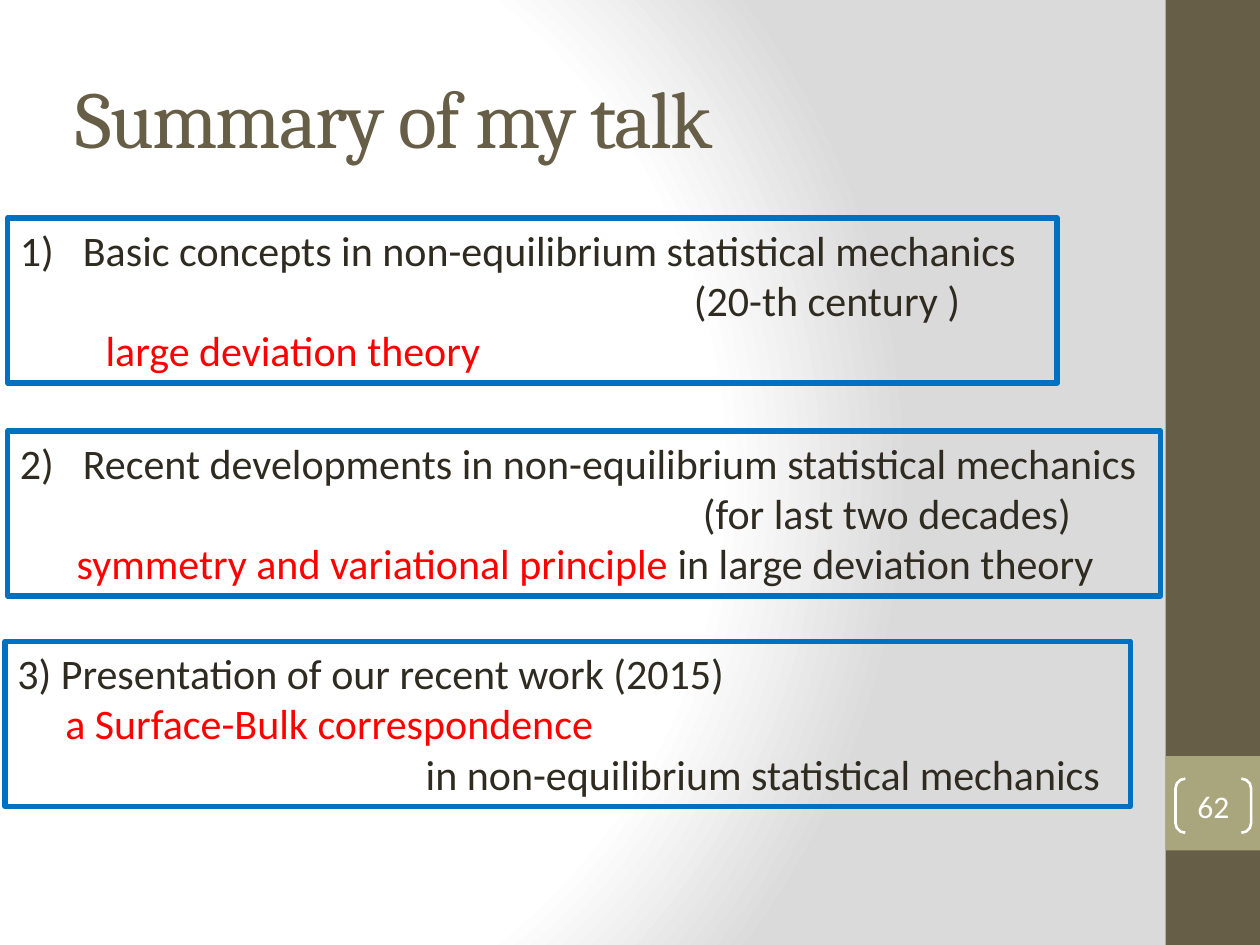
import pptx
import pptx.util
import pptx.dml.color
import pptx.enum.shapes
import pptx.enum.text
import pptx.oxml
import pptx.oxml.ns

# Content: each line is (indent in inches, [(text, colour), ...])
TITLE = "Summary of my talk"
PAGE = "62"
BOXES = [
    {"at": (0.06, 1.73, 8.33), "num": 1, "lines": [
        (0.5, [("Basic concepts in non-equilibrium statistical mechanics", "ink")]),
        (5.35, [("(20-th century )", "ink")]),
        (0.68, [("large deviation theory", "red")])]},
    {"at": (0.06, 3.42, 9.15), "num": 2, "lines": [
        (0.5, [("Recent developments in non-equilibrium statistical mechanics", "ink")]),
        (5.42, [("(for last two decades)", "ink")]),
        (0.45, [("symmetry and variational principle ", "red"),
                ("in large deviation theory", "ink")])]},
    {"at": (0.04, 5.09, 8.93), "num": None, "lines": [
        (0, [("3) Presentation of our recent work (2015)", "ink")]),
        (0.38, [("a Surface-Bulk correspondence", "red")]),
        (3.24, [("in non-equilibrium statistical mechanics", "ink")])]},
]
COLORS = {"ink": "2F2B20", "red": "FF0000", "brown": "675E47", "olive": "A9A57C",
          "blue": "0070C0", "white": "FFFFFF", "gray": "DADADA"}
STOPS = [(0, "white"), (75, "white"), (100, "gray")]

# Page
WIDE, HIGH = 10, 7.5
BAR = 0.075 * WIDE
BOX_H = 1.31
SHAPE = pptx.enum.shapes.MSO_SHAPE
ALIGN = pptx.enum.text.PP_ALIGN
inch = pptx.util.Inches
deck = pptx.Presentation()
deck.slide_width, deck.slide_height = inch(WIDE), inch(HIGH)
slide = deck.slides.add_slide(deck.slide_layouts[6])


def rgb(name):
    return pptx.dml.color.RGBColor.from_string(COLORS[name])


def draw(kind, at, fill=None, line=None, width=1):
    shape = slide.shapes.add_shape(kind, *map(inch, at))
    shape.shadow.inherit = False
    if fill:
        shape.fill.solid()
        shape.fill.fore_color.rgb = rgb(fill)
    else:
        shape.fill.background()
    if line:
        shape.line.color.rgb = rgb(line)
        shape.line.width = pptx.util.Pt(width)
    else:
        shape.line.fill.background()
    return shape


def write(shape, lines, size=24, font="Calibri", align=ALIGN.LEFT, inset=(0.1, 0.05),
          middle=True, num=None, track=0):
    frame = shape.text_frame
    frame.word_wrap = True
    anchor = pptx.enum.text.MSO_ANCHOR
    frame.vertical_anchor = anchor.MIDDLE if middle else anchor.TOP
    frame.margin_left = frame.margin_right = inch(inset[0])
    frame.margin_top = frame.margin_bottom = inch(inset[1])
    for i, (left, runs) in enumerate(lines):
        para = frame.paragraphs[0] if i == 0 else frame.add_paragraph()
        para.alignment = align
        props = para._p.get_or_add_pPr()
        props.set("marL", str(inch(left)))
        props.set("indent", "0")
        if num and i == 0:
            props.set("indent", str(-inch(left)))
            mark = pptx.oxml.parse_xml(
                f'<a:buAutoNum {pptx.oxml.ns.nsdecls("a")} type="arabicParenR" startAt="{num}"/>')
            props.append(mark)
        for text, color in runs:
            run = para.add_run()
            run.text = text
            run.font.size = pptx.util.Pt(size)
            run.font.name = font
            run.font.color.rgb = rgb(color)
            if track:
                run._r.get_or_add_rPr().set("spc", str(track * 100))


# Background: round gradient, white to gray
slide.background.fill.gradient()
old = slide.element.find(".//" + pptx.oxml.ns.qn("a:gradFill"))
stops = "".join(f'<a:gs pos="{pos * 1000}"><a:srgbClr val="{COLORS[name]}"/></a:gs>'
                for pos, name in STOPS)
grad = pptx.oxml.parse_xml(
    f'<a:gradFill {pptx.oxml.ns.nsdecls("a")} rotWithShape="1"><a:gsLst>{stops}</a:gsLst>'
    '<a:path path="circle"><a:fillToRect l="20000" t="50000" r="100000" b="50000"/></a:path>'
    '</a:gradFill>')
old.getparent().replace(old, grad)

# Side bar
draw(SHAPE.RECTANGLE, (WIDE - BAR, 0, BAR, HIGH), fill="brown")
draw(SHAPE.RECTANGLE, (WIDE - BAR, 0.8 * HIGH, BAR, BAR), fill="olive")

# Title
head = slide.shapes.add_textbox(*map(inch, (0.5, 0.3, 8.33, 1.25)))
write(head, [(0, [(TITLE, "brown")])], size=46, font="Cambria", track=-1)

# Page number
badge = draw(SHAPE.DOUBLE_BRACKET, (9.33, 6.18, 0.6, 0.43), line="white", width=1.5)
badge.adjustments[0] = 0.18
write(badge, [(0, [(PAGE, "white")])], size=18, align=ALIGN.CENTER, inset=(0, 0))

# Summary boxes
for box in BOXES:
    frame = draw(SHAPE.RECTANGLE, (*box["at"], BOX_H), line="blue", width=3)
    write(frame, box["lines"], middle=False, num=box["num"])

deck.save("out.pptx")
